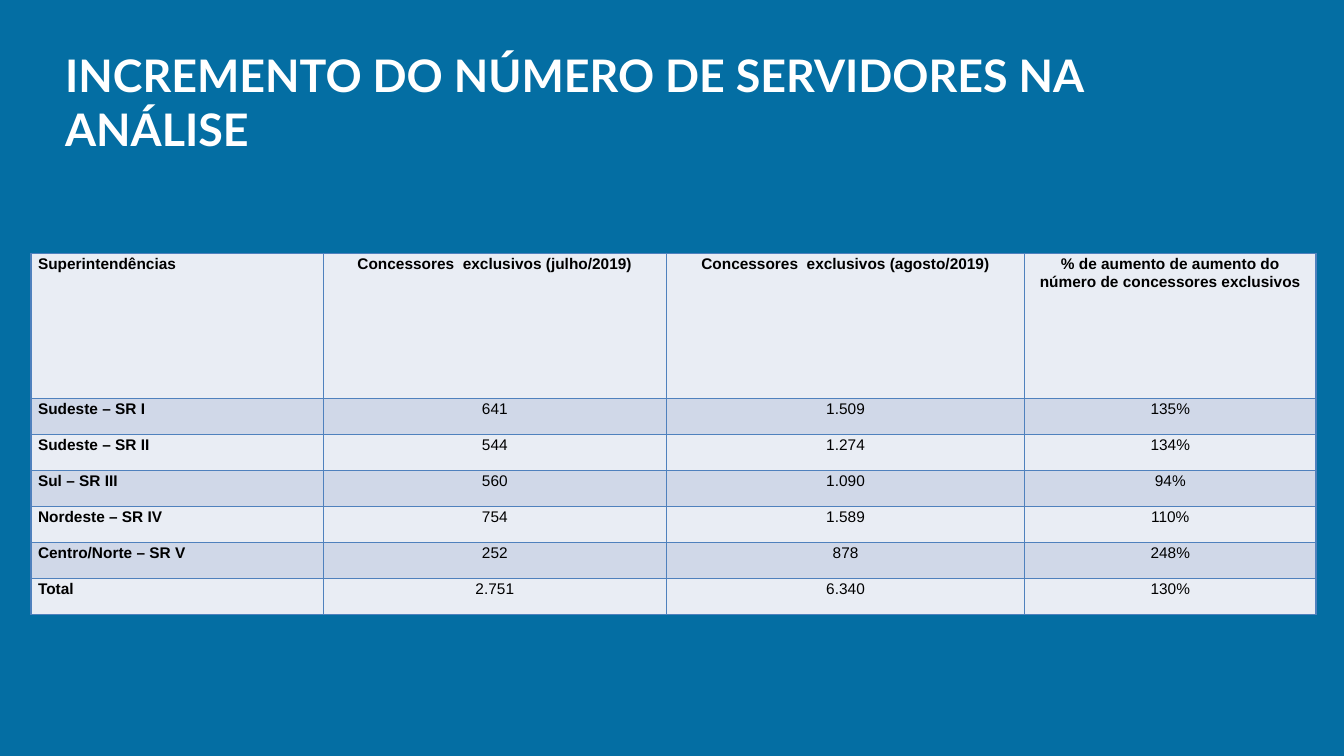
"""Build a slide with a table of exclusive analysts by region."""
from lxml import etree
from pptx import Presentation
from pptx.dml.color import RGBColor
from pptx.enum.text import MSO_ANCHOR, MSO_AUTO_SIZE, PP_ALIGN
from pptx.oxml.ns import qn
from pptx.util import Pt

TITLE = "INCREMENTO DO NÚMERO DE SERVIDORES NA ANÁLISE"
ROWS = [
    ("Superintendências", "Concessores  exclusivos (julho/2019)",
     "Concessores  exclusivos (agosto/2019)",
     "% de aumento de aumento do número de concessores exclusivos"),
    ("Sudeste – SR I", "641", "1.509", "135%"),
    ("Sudeste – SR II", "544", "1.274", "134%"),
    ("Sul – SR III", "560", "1.090", "94%"),
    ("Nordeste – SR IV", "754", "1.589", "110%"),
    ("Centro/Norte – SR V", "252", "878", "248%"),
    ("Total", "2.751", "6.340", "130%"),
]
WIDTHS = [292, 343, 358, 291]
HEAD, LINE = 145, 36
LEFT, TOP = 31, 253

BLUE = RGBColor(0x04, 0x6E, 0xA3)
WHITE = RGBColor(0xFF, 0xFF, 0xFF)
BLACK = RGBColor(0, 0, 0)
EDGE = RGBColor(0x4F, 0x81, 0xBD)
BANDS = [RGBColor(0xE9, 0xED, 0xF4), RGBColor(0xD0, 0xD8, 0xE8)]
START, MID = PP_ALIGN.LEFT, PP_ALIGN.CENTER
UPPER = MSO_ANCHOR.TOP
FIXED = MSO_AUTO_SIZE.NONE
SCALE = 9080


def px(size):
    """Turn pixels into EMU."""
    return size * SCALE


def write(para, text, face, size, color, bold, align):
    """Add one styled run to a paragraph."""
    para.alignment = align
    run = para.add_run()
    run.text = text
    font = run.font
    font.name, font.size, font.bold = face, Pt(size), bold
    font.color.rgb = color


def border(cell):
    """Draw a thin line on each side of a cell."""
    props = cell._tc.get_or_add_tcPr()
    for side in "LRTB":
        line = etree.SubElement(props, qn(f"a:ln{side}"), w=str(Pt(1)))
        fill = etree.SubElement(line, qn("a:solidFill"))
        etree.SubElement(fill, qn("a:srgbClr"), val=str(EDGE))


def add_title(slide):
    """Place and fill the title."""
    title = slide.shapes.title
    title.left, title.top = px(55), px(43)
    title.width, title.height = px(1197), px(69)
    frame = title.text_frame
    frame.word_wrap = True
    frame.auto_size = FIXED
    frame.vertical_anchor = UPPER
    write(frame.paragraphs[0], TITLE, "Lato", 32, WHITE, True, START)


def add_grid(slide):
    """Place and fill the table."""
    heights = [HEAD] + [LINE] * (len(ROWS) - 1)
    table = slide.shapes.add_table(
        len(ROWS), len(WIDTHS), px(LEFT), px(TOP),
        px(sum(WIDTHS)), px(sum(heights))).table
    for col, width in zip(table.columns, WIDTHS):
        col.width = px(width)
    for r, (row, height) in enumerate(zip(ROWS, heights)):
        table.rows[r].height = px(height)
        for c, text in enumerate(row):
            cell = table.cell(r, c)
            border(cell)
            cell.fill.solid()
            cell.fill.fore_color.rgb = BANDS[r % 2]
            cell.margin_left = cell.margin_right = px(7)
            cell.margin_top, cell.margin_bottom = px(1), 0
            cell.vertical_anchor = UPPER
            para = cell.text_frame.paragraphs[0]
            para.line_spacing, para.space_after = 1.07, Pt(8)
            write(para, text, "Arial", 11, BLACK, r == 0 or c == 0,
                  MID if c else START)


def main():
    """Build and save the slide."""
    deck = Presentation()
    deck.slide_width, deck.slide_height = px(1343), px(755)
    slide = deck.slides.add_slide(deck.slide_layouts[5])
    back = slide.background.fill
    back.solid()
    back.fore_color.rgb = BLUE
    add_title(slide)
    add_grid(slide)
    deck.save("out.pptx")


if __name__ == "__main__":
    main()
